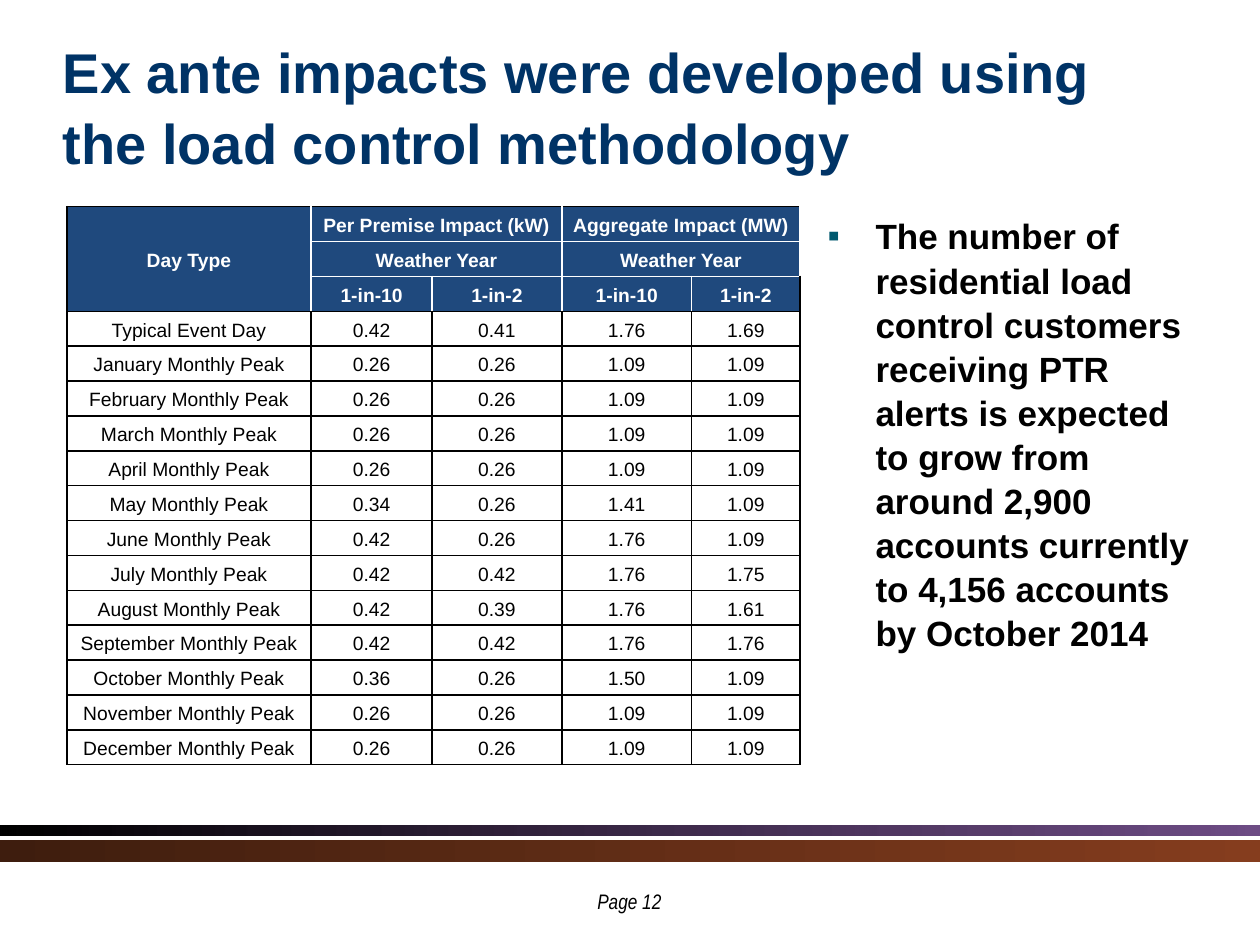
from lxml.etree import SubElement
from pptx import Presentation
from pptx.dml.color import RGBColor
from pptx.enum.shapes import MSO_SHAPE as Shape
from pptx.enum.text import MSO_ANCHOR as Anchor, PP_ALIGN as Align
from pptx.oxml.ns import qn
from pptx.util import Inches, Pt

WIDTH, HEIGHT = 10, 7.5
BLACK, WHITE, NAVY, BLUE, TEAL = "000000", "FFFFFF", "003366", "1F497D", "00596F"

TITLE = "Ex ante impacts were developed using the load control methodology"
POINT = ("The number of residential load control customers receiving PTR alerts "
         "is expected to grow from around 2,900 accounts currently to 4,156 "
         "accounts by October 2014")
PAGE = "Page 12"

HEADER = [
    (0, 0, 3, 1, "Day Type"),
    (0, 1, 1, 2, "Per Premise Impact (kW)"),
    (0, 3, 1, 2, "Aggregate Impact (MW)"),
    (1, 1, 1, 2, "Weather Year"),
    (1, 3, 1, 2, "Weather Year"),
    (2, 1, 1, 1, "1-in-10"),
    (2, 2, 1, 1, "1-in-2"),
    (2, 3, 1, 1, "1-in-10"),
    (2, 4, 1, 1, "1-in-2"),
]
IMPACTS = [
    ("Typical Event Day", "0.42", "0.41", "1.76", "1.69"),
    ("January Monthly Peak", "0.26", "0.26", "1.09", "1.09"),
    ("February Monthly Peak", "0.26", "0.26", "1.09", "1.09"),
    ("March Monthly Peak", "0.26", "0.26", "1.09", "1.09"),
    ("April Monthly Peak", "0.26", "0.26", "1.09", "1.09"),
    ("May Monthly Peak", "0.34", "0.26", "1.41", "1.09"),
    ("June Monthly Peak", "0.42", "0.26", "1.76", "1.09"),
    ("July Monthly Peak", "0.42", "0.42", "1.76", "1.75"),
    ("August Monthly Peak", "0.42", "0.39", "1.76", "1.61"),
    ("September Monthly Peak", "0.42", "0.42", "1.76", "1.76"),
    ("October Monthly Peak", "0.36", "0.26", "1.50", "1.09"),
    ("November Monthly Peak", "0.26", "0.26", "1.09", "1.09"),
    ("December Monthly Peak", "0.26", "0.26", "1.09", "1.09"),
]
HEADER_ROWS = 3
COLUMN_WIDTHS = [1.94, 0.96, 1.03, 1.03, 0.86]
TABLE_LEFT, TABLE_TOP, TABLE_HEIGHT = 0.53, 1.64, 4.43
BARS = [
    (6.55, 0.08, [(BLACK, 100), ("542D6F", 85)]),
    (6.67, 0.17, [("3E1D0E", 100), ("853D1E", 100)]),
]


def color(value):
    return RGBColor.from_string(value)


def write(paragraph, text, size, text_color, **formats):
    paragraph.text = text
    font = paragraph.runs[0].font
    font.color.rgb = color(text_color)
    for name, value in {"name": "Arial", "size": Pt(size), **formats}.items():
        setattr(font, name, value)


def add_text(slide, box, anchor):
    frame = slide.shapes.add_textbox(*map(Inches, box)).text_frame
    frame.word_wrap = True
    frame.vertical_anchor = anchor
    return frame.paragraphs[0]


def add_bar(slide, top, height, stops):
    box = map(Inches, (0, top, WIDTH, height))
    bar = slide.shapes.add_shape(Shape.RECTANGLE, *box)
    bar.shadow.inherit = False
    bar.line.fill.background()
    bar.fill.gradient()
    bar.fill.gradient_angle = 0
    for stop, (value, _) in zip(bar.fill.gradient_stops, stops):
        stop.color.rgb = color(value)
    colors = bar._element.spPr.iter(qn("a:srgbClr"))
    for element, (_, opacity) in zip(colors, stops):
        if opacity < 100:
            SubElement(element, qn("a:alpha"), val=str(opacity * 1000))


def add_borders(cell, row, column):
    header = row < HEADER_ROWS
    outer = {
        "L": column == 0,
        "R": column == len(COLUMN_WIDTHS) - 1,
        "T": row == 0,
        "B": row == HEADER_ROWS - 1,
    }
    properties = cell._tc.get_or_add_tcPr()
    for side, is_outer in outer.items():
        line = SubElement(properties, qn("a:ln" + side), w=str(Pt(1)))
        fill = SubElement(line, qn("a:solidFill"))
        value = WHITE if header and not is_outer else BLACK
        SubElement(fill, qn("a:srgbClr"), val=value)


def fill_cell(cell, text, header):
    margins = {"margin_left": 0.07, "margin_right": 0.07,
               "margin_top": 0, "margin_bottom": 0}
    for name, value in margins.items():
        setattr(cell, name, Inches(value))
    cell.vertical_anchor = Anchor.MIDDLE
    paragraph = cell.text_frame.paragraphs[0]
    paragraph.alignment = Align.CENTER
    paragraph.line_spacing = 1.15
    write(paragraph, text, 11, WHITE if header else BLACK, bold=header)


def add_impact_table(slide):
    rows = HEADER_ROWS + len(IMPACTS)
    box = (TABLE_LEFT, TABLE_TOP, sum(COLUMN_WIDTHS), TABLE_HEIGHT)
    table = slide.shapes.add_table(
        rows, len(COLUMN_WIDTHS), *map(Inches, box)).table
    table.first_row = table.horz_banding = False
    for column, width in zip(table.columns, COLUMN_WIDTHS):
        column.width = Inches(width)
    for row in range(rows):
        table.rows[row].height = Inches(TABLE_HEIGHT / rows)
        for column in range(len(COLUMN_WIDTHS)):
            cell = table.cell(row, column)
            add_borders(cell, row, column)
            if row < HEADER_ROWS:
                cell.fill.solid()
                cell.fill.fore_color.rgb = color(BLUE)
            else:
                cell.fill.background()
                fill_cell(cell, IMPACTS[row - HEADER_ROWS][column], False)
    for row, column, row_span, column_span, text in HEADER:
        cell = table.cell(row, column)
        if row_span * column_span > 1:
            cell.merge(table.cell(row + row_span - 1, column + column_span - 1))
        fill_cell(cell, text, True)


def add_point(slide):
    paragraph = add_text(slide, (6.47, TABLE_TOP, 3.22, 4.72), Anchor.TOP)
    paragraph.line_spacing = 1.05
    properties = paragraph._p.get_or_add_pPr()
    properties.set("marL", str(Inches(0.38)))
    properties.set("indent", str(-Inches(0.38)))
    bullet_color = SubElement(properties, qn("a:buClr"))
    SubElement(bullet_color, qn("a:srgbClr"), val=TEAL)
    SubElement(properties, qn("a:buFont"), typeface="Arial")
    SubElement(properties, qn("a:buChar"), char="▪")
    write(paragraph, POINT, 20, BLACK, bold=True)


def main():
    presentation = Presentation()
    presentation.slide_width = Inches(WIDTH)
    presentation.slide_height = Inches(HEIGHT)
    slide = presentation.slides.add_slide(presentation.slide_layouts[6])
    for bar in BARS:
        add_bar(slide, *bar)
    title = add_text(slide, (0.4, 0.3, 9.13, 1.07), Anchor.MIDDLE)
    title.line_spacing = 1.05
    write(title, TITLE, 32, NAVY, bold=True)
    page = add_text(slide, (3.93, 7, 2.13, 0.22), Anchor.TOP)
    page.alignment = Align.CENTER
    write(page, PAGE, 12, BLACK, name="Arial Narrow", italic=True)
    add_impact_table(slide)
    add_point(slide)
    presentation.save("out.pptx")


if __name__ == "__main__":
    main()
